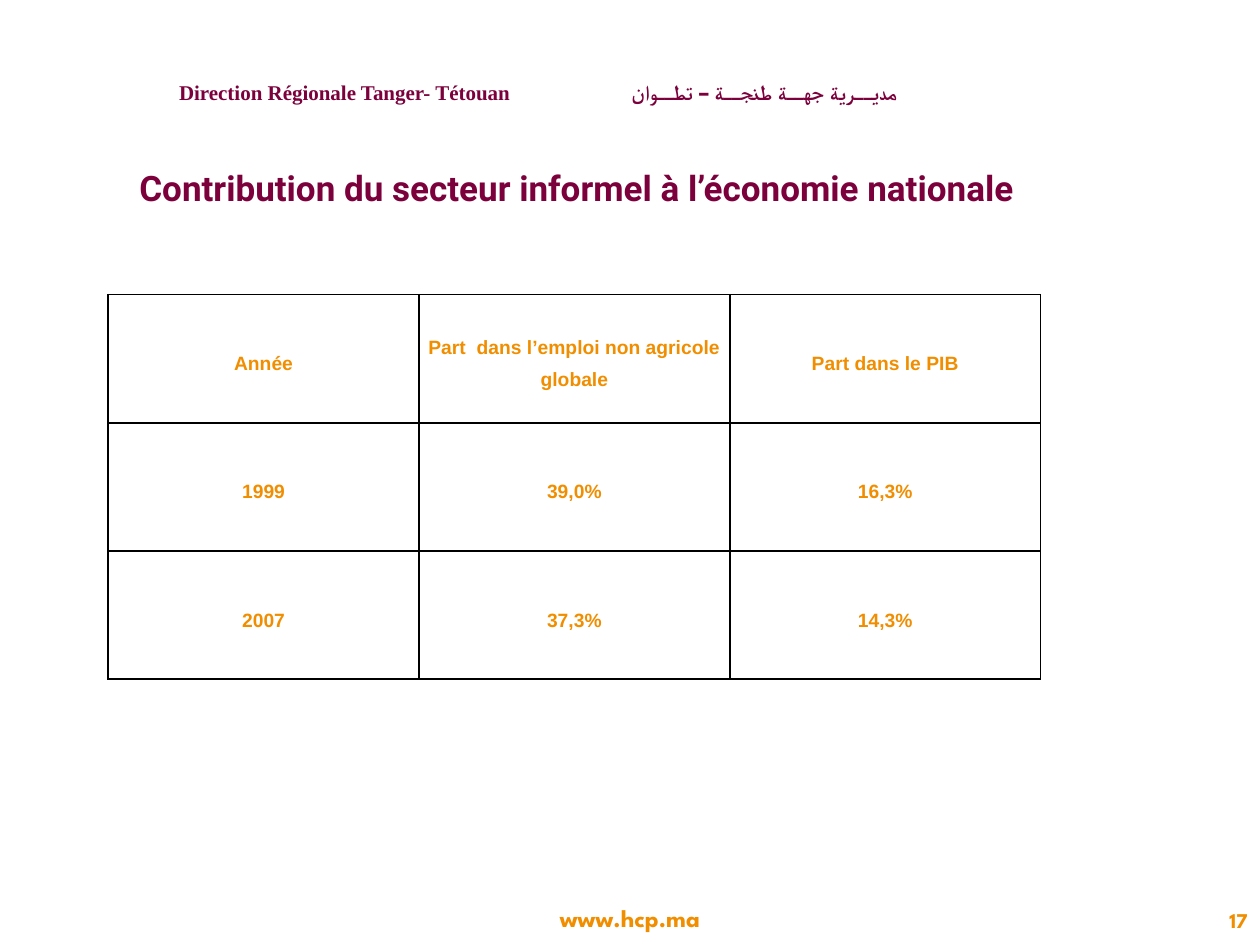
from lxml import etree
from pptx import Presentation
from pptx import util as u
from pptx.dml.color import RGBColor
from pptx.enum import text
from pptx.oxml import ns

PLUM = "7B003B"
ORANGE = "F18E00"
BLACK = "000000"

SHARES = [
    ["Année", "Part  dans l’emploi non agricole globale", "Part dans le PIB"],
    ["1999", "39,0%", "16,3%"],
    ["2007", "37,3%", "14,3%"],
]


def rgb(value):
    return RGBColor.from_string(value)


def write(frame, words, size, font, color, align="CENTER", anchor="MIDDLE",
          spacing=None, after=None, tab=None):
    frame.word_wrap = True
    frame.vertical_anchor = getattr(text.MSO_ANCHOR, anchor)
    line = frame.paragraphs[0]
    line.alignment = getattr(text.PP_ALIGN, align)
    if spacing:
        line.line_spacing = spacing
    if after:
        line.space_after = u.Pt(after)
    if tab:
        stops = etree.SubElement(line._p.get_or_add_pPr(), ns.qn("a:tabLst"))
        etree.SubElement(stops, ns.qn("a:tab"), pos=str(u.Cm(tab)), algn="l")
    run = line.add_run()
    run.text = words
    run.font.size = u.Pt(size)
    run.font.name = font
    run.font.bold = True
    run.font.color.rgb = rgb(color)


def add_label(slide, words, left, top, width, height, inset=0.25, **style):
    label = slide.shapes.add_textbox(u.Cm(left), u.Cm(top), u.Cm(width), u.Cm(height))
    label.text_frame.margin_left = u.Cm(inset)
    write(label.text_frame, words, **style)


def draw_borders(cell, color, width):
    properties = cell._tc.get_or_add_tcPr()
    for position, side in enumerate(("lnL", "lnR", "lnT", "lnB")):
        border = etree.Element(ns.qn(f"a:{side}"), w=str(u.Pt(width)))
        fill = etree.SubElement(border, ns.qn("a:solidFill"))
        etree.SubElement(fill, ns.qn("a:srgbClr"), val=color)
        properties.insert(position, border)


def add_share_table(slide, rows, left, top, width, height):
    table = slide.shapes.add_table(len(rows), len(rows[0]), u.Cm(left), u.Cm(top),
                                   u.Cm(width), u.Cm(height)).table
    table.first_row = table.horz_banding = False
    for row, values in enumerate(rows):
        for column, value in enumerate(values):
            cell = table.cell(row, column)
            cell.margin_left = cell.margin_right = u.Cm(0.13)
            cell.margin_top = cell.margin_bottom = 0
            cell.vertical_anchor = text.MSO_ANCHOR.MIDDLE
            cell.fill.background()
            draw_borders(cell, BLACK, 1)
            write(cell.text_frame, value, size=11, font="Arial", color=ORANGE,
                  spacing=1.5, after=10)
            cell.vertical_anchor = text.MSO_ANCHOR.MIDDLE


def main():
    deck = Presentation()
    deck.slide_width, deck.slide_height = u.Cm(25.4), u.Cm(19.05)
    slide = deck.slides.add_slide(deck.slide_layouts[6])

    add_label(slide, "www.hcp.ma", 9.7, 18.08, 6, 0.85,
              size=14, font="League Spartan", color=ORANGE, anchor="TOP")
    add_label(slide, "Contribution du secteur informel à l’économie nationale",
              0.58, 2.13, 22.1, 3.18,
              size=20, font="Roboto", color=PLUM, spacing=1.15)
    add_label(slide, "17", 17.35, 18.03, 8.05, 1.02,
              size=12, font="League Spartan", color=ORANGE, align="RIGHT")
    add_share_table(slide, SHARES, 2.18, 5.94, 18.8, 7.75)
    add_label(slide, "Direction Régionale Tanger- Tétouan\tمديــرية جهــة طنجــة – تطــوان",
              2.77, 1.57, 17.27, 0.58, inset=0.84,
              size=12, font="Times New Roman", color=PLUM, align="LEFT", tab=9.12)
    deck.save("out.pptx")


if __name__ == "__main__":
    main()
